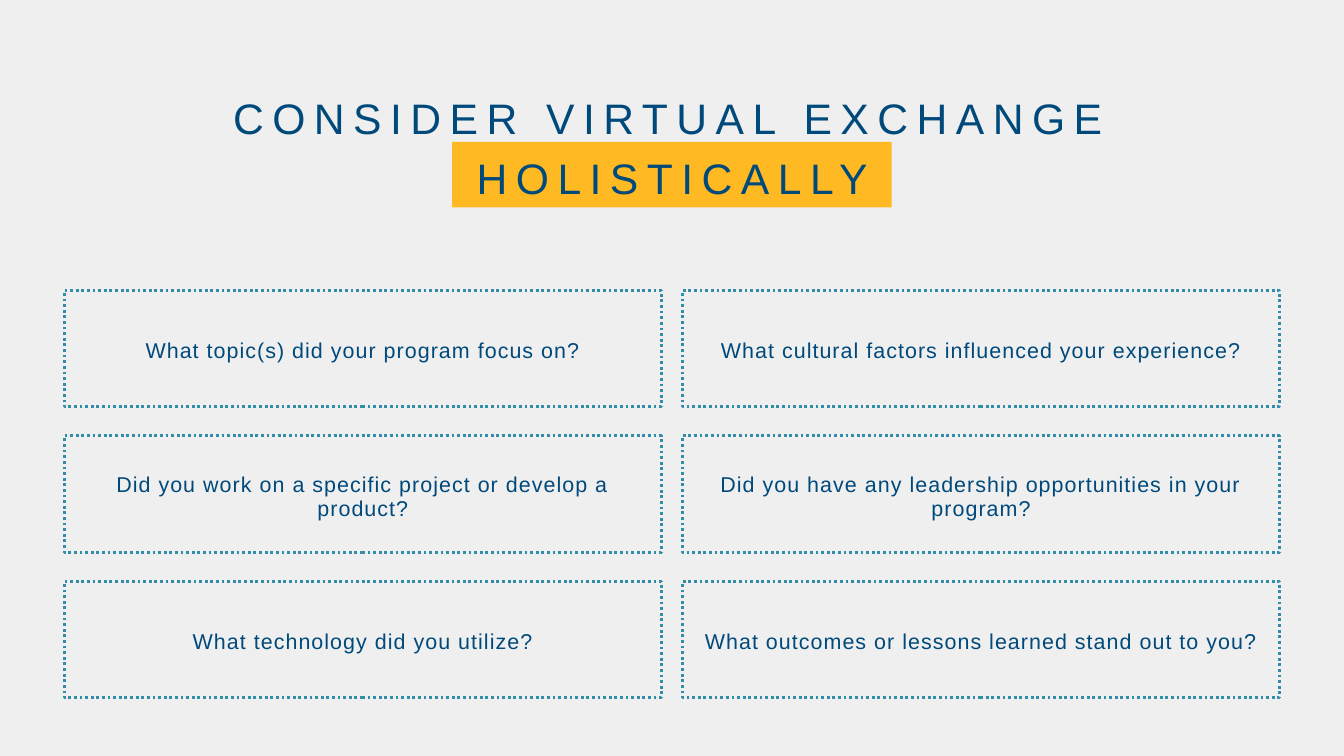
from dataclasses import dataclass

from pptx import Presentation
from pptx import util as u
from pptx.dml.color import RGBColor
from pptx.enum import dml, shapes, text

PX = 4572  # EMU
FONT = "Arial"
GREY = RGBColor(0xEF, 0xEF, 0xEF)
YELLOW = RGBColor(0xFF, 0xB9, 0x23)
NAVY = RGBColor(0x00, 0x49, 0x7B)
TEAL = RGBColor(0x32, 0x8D, 0xAB)

LEFT, TOP = 192, 864
CARD_W, CARD_H = 1776, 347
COL_STEP, ROW_STEP = 1840, 433
TEXT_DROP = 16
QUESTIONS = [
    ("What topic(s) did your program focus on?",
     "What cultural factors influenced your experience?"),
    ("Did you work on a specific project or develop a product?",
     "Did you have any leadership opportunities in your program?"),
    ("What technology did you utilize?",
     "What outcomes or lessons learned stand out to you?"),
]


@dataclass(frozen=True)
class Box:
    x: int
    y: int
    w: int
    h: int

    def emu(self) -> list[u.Emu]:
        return [u.Emu(v * PX) for v in (self.x, self.y, self.w, self.h)]


@dataclass(frozen=True)
class Style:
    size: float
    leading: float
    tracking: float
    inset: int
    anchor: text.MSO_ANCHOR


TITLE = Style(45.7, 64, 9.1, 0, text.MSO_ANCHOR.TOP)
BODY = Style(23, 25.3, 1.1, 12, text.MSO_ANCHOR.MIDDLE)


def add_rect(s, box: Box):
    sp = s.shapes.add_shape(shapes.MSO_SHAPE.RECTANGLE, *box.emu())
    sp.shadow.inherit = False
    return sp


def add_text(s, box: Box, words: str, style: Style) -> None:
    tf = s.shapes.add_textbox(*box.emu()).text_frame
    tf.word_wrap = True
    tf.vertical_anchor = style.anchor
    tf.margin_left = tf.margin_right = u.Emu(style.inset * PX)
    tf.margin_top = tf.margin_bottom = u.Emu(style.inset * PX)
    tf.text = words
    p = tf.paragraphs[0]
    p.alignment = text.PP_ALIGN.CENTER
    p.line_spacing = u.Pt(style.leading)
    r = p.runs[0]
    r.font.name = FONT
    r.font.size = u.Pt(style.size)
    r.font.color.rgb = NAVY
    r._r.get_or_add_rPr().set("spc", str(round(style.tracking * 100)))


def add_card(s, box: Box, question: str) -> None:
    sp = add_rect(s, box)
    sp.fill.background()
    sp.line.color.rgb = TEAL
    sp.line.width = u.Pt(3)
    sp.line.dash_style = dml.MSO_LINE.ROUND_DOT
    inner = Box(box.x, box.y + TEXT_DROP, box.w, box.h - TEXT_DROP)
    add_text(s, inner, question, BODY)


def main() -> None:
    prs = Presentation()
    prs.slide_width, prs.slide_height = u.Emu(4000 * PX), u.Emu(2250 * PX)
    s = prs.slides.add_slide(prs.slide_layouts[6])
    s.background.fill.solid()
    s.background.fill.fore_color.rgb = GREY

    highlight = add_rect(s, Box(1346, 422, 1308, 195))
    highlight.fill.solid()
    highlight.fill.fore_color.rgb = YELLOW
    highlight.line.fill.background()
    add_text(s, Box(390, 248, 3222, 346),
             "CONSIDER VIRTUAL EXCHANGE HOLISTICALLY", TITLE)

    for row, pair in enumerate(QUESTIONS):
        for col, question in enumerate(pair):
            box = Box(LEFT + col * COL_STEP, TOP + row * ROW_STEP, CARD_W, CARD_H)
            add_card(s, box, question)

    prs.save("out.pptx")


if __name__ == "__main__":
    main()
